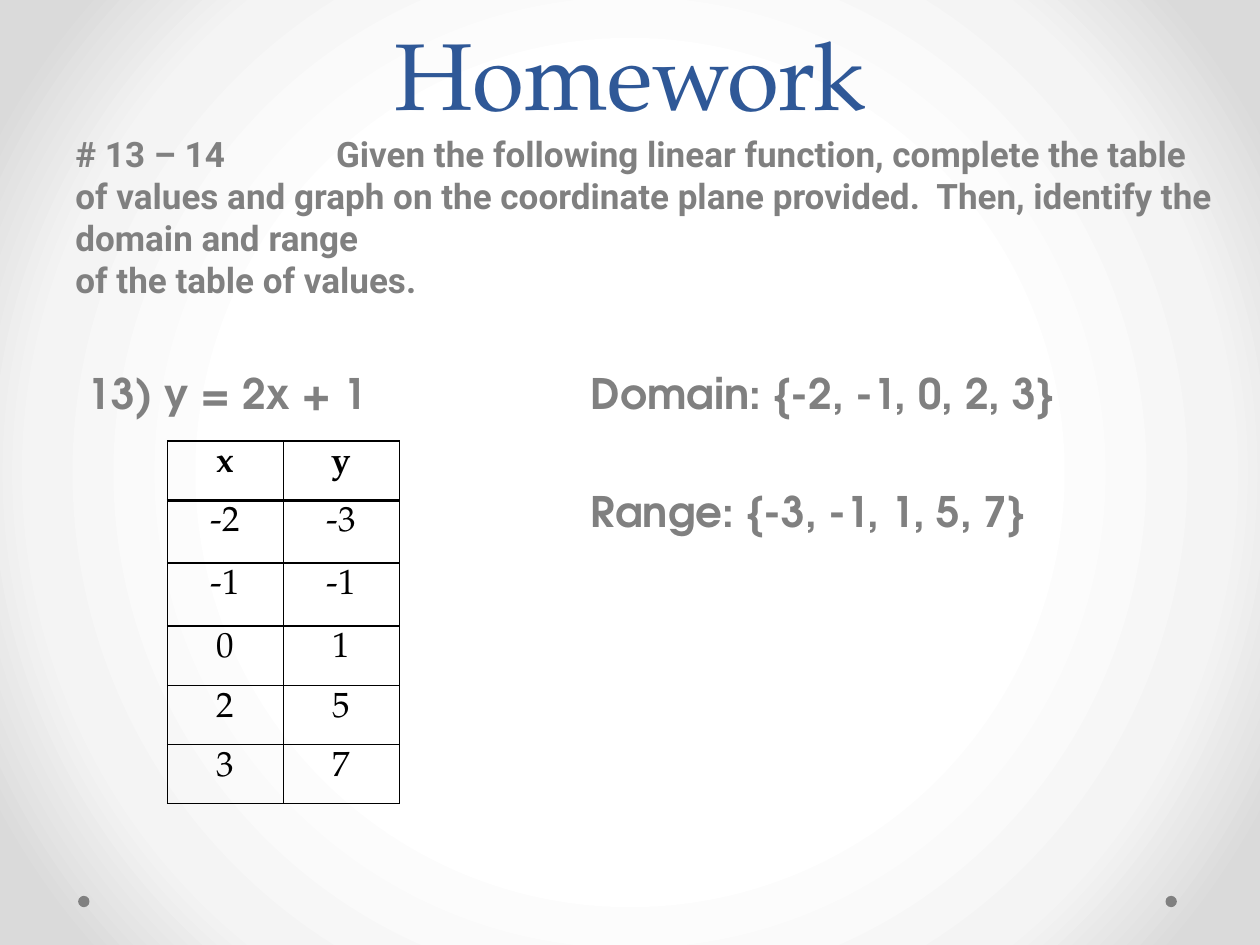
from lxml.etree import SubElement
from pptx import Presentation
from pptx.dml.color import RGBColor
from pptx.enum.shapes import MSO_SHAPE
from pptx.enum.text import MSO_ANCHOR, PP_ALIGN
from pptx.oxml import parse_xml
from pptx.oxml.ns import nsdecls, qn
from pptx.util import Inches, Pt

SERIF = "TeX Gyre Pagella"
SANS = "Roboto"
GEOMETRIC = "TeX Gyre Adventor"
GRAY = "808080"
BLUE = "2F5897"
BLACK = "000000"


def color(value):
    return RGBColor.from_string(value)


class SlideBuilder:
    def __init__(self, presentation):
        self.slide = presentation.slides.add_slide(presentation.slide_layouts[5])

    def background(self, stops):
        stop_xml = "".join(
            f'<a:gs pos="{position * 1000}"><a:srgbClr val="{value}"/></a:gs>'
            for position, value in stops
        )
        background = parse_xml(
            f'<p:bg {nsdecls("p", "a")}><p:bgPr><a:gradFill rotWithShape="1">'
            f"<a:gsLst>{stop_xml}</a:gsLst>"
            '<a:path path="circle"><a:fillToRect l="50000" t="50000" r="50000" b="50000"/></a:path>'
            "</a:gradFill><a:effectLst/></p:bgPr></p:bg>"
        )
        self.slide.element.cSld.insert(0, background)

    def add_run(self, paragraph, text, size, font, fill, bold=False):
        run = paragraph.add_run()
        run.text = text
        run.font.size = Pt(size)
        run.font.name = font
        run.font.bold = bold
        run.font.color.rgb = color(fill)

    def title(self, text, left, top, width, height):
        shape = self.slide.shapes.title
        shape.left, shape.top = Inches(left), Inches(top)
        shape.width, shape.height = Inches(width), Inches(height)
        shape.text_frame.vertical_anchor = MSO_ANCHOR.BOTTOM
        paragraph = shape.text_frame.paragraphs[0]
        paragraph.alignment = PP_ALIGN.CENTER
        paragraph.line_spacing = Pt(58)
        self.add_run(paragraph, text, 54, SERIF, BLUE)

    def text(self, lines, left, top, width, height, size, font, gap=0, tab=None):
        shape = self.slide.shapes.add_textbox(
            Inches(left), Inches(top), Inches(width), Inches(height)
        )
        frame = shape.text_frame
        frame.word_wrap = True
        for index, line in enumerate(lines):
            paragraph = frame.add_paragraph() if index else frame.paragraphs[0]
            paragraph.space_before = Pt(gap if index else 0)
            if tab:
                tabs = SubElement(paragraph._p.get_or_add_pPr(), qn("a:tabLst"))
                SubElement(tabs, qn("a:tab"), pos=str(Inches(tab)), algn="l")
            self.add_run(paragraph, line, size, font, GRAY, bold=True)

    def dot(self, left, top, diameter):
        shape = self.slide.shapes.add_shape(
            MSO_SHAPE.OVAL, Inches(left), Inches(top), Inches(diameter), Inches(diameter)
        )
        shape.shadow.inherit = False
        shape.fill.solid()
        shape.fill.fore_color.rgb = color(GRAY)
        shape.line.fill.background()

    def cell_borders(self, cell, widths):
        properties = cell._tc.get_or_add_tcPr()
        for index, (side, width) in enumerate(widths.items()):
            border = parse_xml(
                f'<a:{side} {nsdecls("a")} w="{Pt(width)}"><a:solidFill>'
                f'<a:srgbClr val="{BLACK}"/></a:solidFill></a:{side}>'
            )
            properties.insert(index, border)

    def table(self, rows, left, top, column_width, row_heights):
        column_count = len(rows[0])
        table = self.slide.shapes.add_table(
            len(rows), column_count, Inches(left), Inches(top),
            Inches(column_width * column_count), Inches(sum(row_heights)),
        ).table
        table.horz_banding = False
        table.first_row = False
        for column in table.columns:
            column.width = Inches(column_width)
        for row_index, values in enumerate(rows):
            table.rows[row_index].height = Inches(row_heights[row_index])
            header = row_index == 0
            for column_index, value in enumerate(values):
                cell = table.cell(row_index, column_index)
                cell.fill.background()
                paragraph = cell.text_frame.paragraphs[0]
                paragraph.alignment = PP_ALIGN.CENTER
                self.add_run(paragraph, value, 20, SERIF, BLACK, bold=header)
                self.cell_borders(cell, {
                    "lnL": 1,
                    "lnR": 1,
                    "lnT": 2 if row_index == 1 else 1,
                    "lnB": 2 if header else 1,
                })


def main():
    presentation = Presentation()
    presentation.slide_width = Inches(10)
    presentation.slide_height = Inches(7.5)
    builder = SlideBuilder(presentation)
    builder.background([(50, "FFFFFF"), (76, "F4F4F4"), (92, "DADADA")])
    for left in (9.25, 0.62):
        builder.dot(left, 7.11, 0.09)
    builder.title("Homework", 0.5, 0.25, 9, 0.83)
    builder.text(
        [
            "# 13 – 14\t Given the following linear function, complete the table of values "
            "and graph on the coordinate plane provided.  Then, identify the domain and range",
            "of the table of values.",
        ],
        0.5, 1, 9.27, 1.45, 20, SANS, tab=2,
    )
    builder.text(["13) y = 2x + 1"], 0.6, 2.87, 3.5, 0.5, 24, GEOMETRIC)
    builder.text(
        ["Domain: {-2, -1, 0, 2, 3}", "Range: {-3, -1, 1, 5, 7}"],
        4.59, 2.87, 5.18, 1.45, 24, GEOMETRIC, gap=38.6,
    )
    builder.table(
        [("x", "y"), ("-2", "-3"), ("-1", "-1"), ("0", "1"), ("2", "5"), ("3", "7")],
        1.33, 3.5, 0.92, [0.47, 0.5, 0.5, 0.47, 0.47, 0.47],
    )
    presentation.save("out.pptx")


if __name__ == "__main__":
    main()
